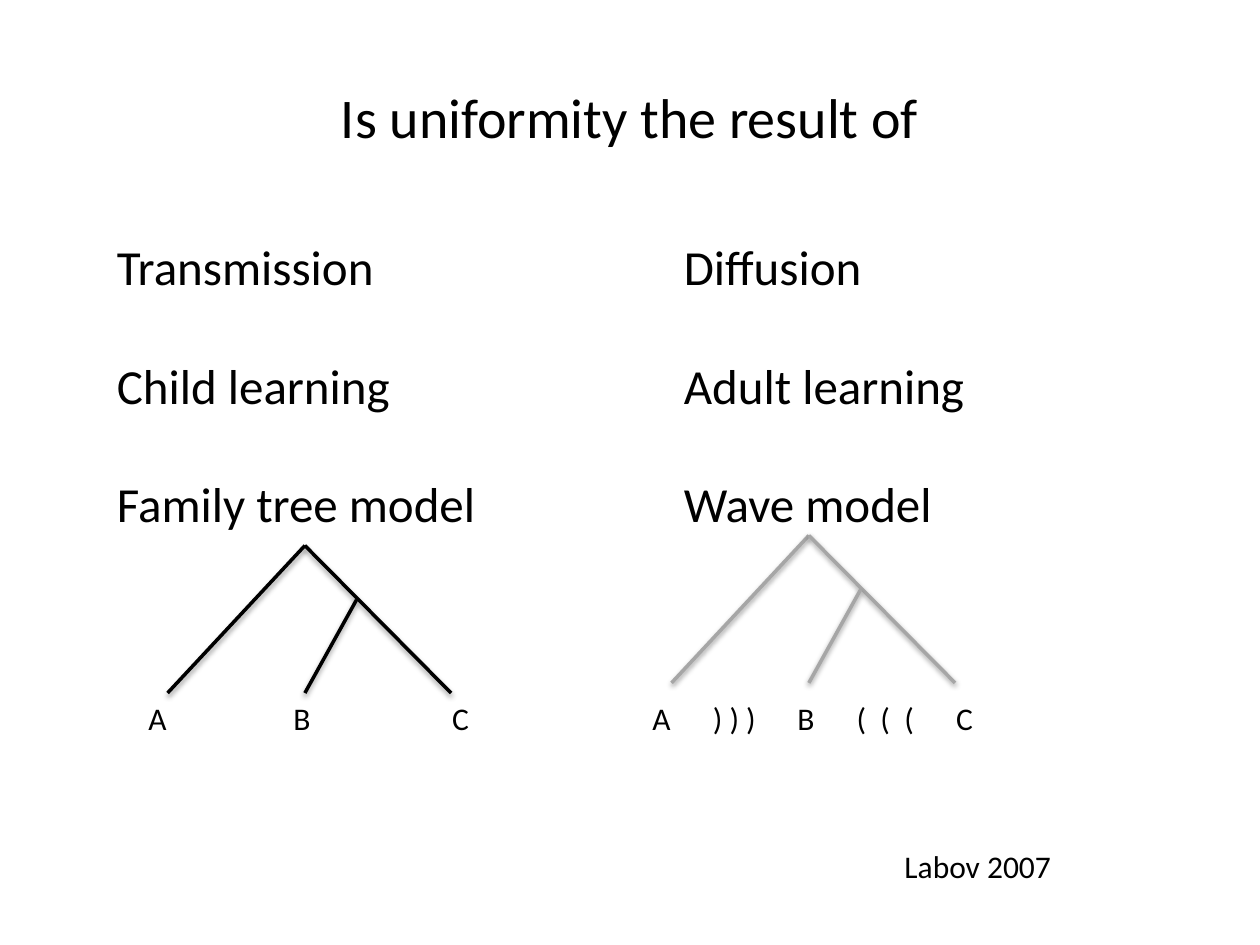
from typing import NamedTuple

import pptx
import pptx.dml.color
import pptx.enum.text
import pptx.oxml
import pptx.oxml.ns
import pptx.util
from pptx.util import Inches

FONT = "Calibri"
BLACK = "000000"
GREY = "A6A6A6"
SHADOW = (
    f'<a:effectLst {pptx.oxml.ns.nsdecls("a")}>'
    '<a:outerShdw blurRad="40000" dist="20000" dir="5400000" rotWithShape="0">'
    '<a:srgbClr val="000000"><a:alpha val="38000"/></a:srgbClr>'
    '</a:outerShdw></a:effectLst>'
)


class Label(NamedTuple):
    lines: list[str]
    left: float
    top: float
    width: float
    height: float
    size: int = 18
    stops: tuple[float, ...] = ()
    gap: int = 0
    title: bool = False


class Tree(NamedTuple):
    left: float
    top: float
    color: str


LABELS = [
    Label(["Is uniformity the result of"], 0.5, 0.3, 9, 1.25, 32, title=True),
    Label(["Transmission\tDiffusion",
           "Child learning\tAdult learning",
           "Family tree model\tWave model"],
          0.83, 1.83, 7.83, 3.4, 28, (4.5,), 34),
    Label(["A\tB\tC"], 1.08, 5.5, 3, 0.4, stops=(1.15, 2.41)),
    Label(["A\t) ) )\tB\t(\t(\t(\tC"], 5.08, 5.5, 3, 0.4,
          stops=(0.48, 1.15, 1.62, 1.81, 2, 2.41)),
    Label(["Labov 2007"], 7.08, 6.67, 2.42, 0.42),
]
TREES = [Tree(1.33, 4.33, BLACK), Tree(5.33, 4.25, GREY)]
# Branch ends, measured from the top left corner of a tree
BRANCHES = [
    ((1.09, 0), (0, 1.17)),
    ((1.09, 0), (2.25, 1.17)),
    ((1.5, 0.43), (1.09, 1.17)),
]


def rgb(code: str) -> pptx.dml.color.RGBColor:
    return pptx.dml.color.RGBColor.from_string(code)


def set_tabs(para, stops: tuple[float, ...]) -> None:
    """Give a paragraph left tab stops, in inches from the text edge."""
    tabs = "".join(f'<a:tab pos="{Inches(stop)}" algn="l"/>' for stop in stops)
    para._p.get_or_add_pPr().append(pptx.oxml.parse_xml(
        f'<a:tabLst {pptx.oxml.ns.nsdecls("a")}>{tabs}</a:tabLst>'))


def add_label(slide, label: Label) -> None:
    box = slide.shapes.add_textbox(Inches(label.left), Inches(label.top),
                                   Inches(label.width), Inches(label.height))
    frame = box.text_frame
    frame.word_wrap = True
    frame.text = "\n".join(label.lines)
    if label.title:
        frame.vertical_anchor = pptx.enum.text.MSO_ANCHOR.MIDDLE
    for row, para in enumerate(frame.paragraphs):
        if label.title:
            para.alignment = pptx.enum.text.PP_ALIGN.CENTER
        if row and label.gap:
            para.space_before = pptx.util.Pt(label.gap)
        if label.stops:
            set_tabs(para, label.stops)
        for run in para.runs:
            run.font.name = FONT
            run.font.size = pptx.util.Pt(label.size)
            run.font.color.rgb = rgb(BLACK)


def add_tree(slide, tree: Tree) -> None:
    for (x1, y1), (x2, y2) in BRANCHES:
        branch = slide.shapes.add_connector(
            pptx.enum.shapes.MSO_CONNECTOR.STRAIGHT,
            Inches(tree.left + x1), Inches(tree.top + y1),
            Inches(tree.left + x2), Inches(tree.top + y2))
        branch.line.color.rgb = rgb(tree.color)
        branch.line.width = pptx.util.Pt(2)
        branch._element.spPr.append(pptx.oxml.parse_xml(SHADOW))


def main() -> None:
    deck = pptx.Presentation()
    deck.slide_width = Inches(10)
    deck.slide_height = Inches(7.5)
    slide = deck.slides.add_slide(deck.slide_layouts[6])
    for label in LABELS:
        add_label(slide, label)
    for tree in TREES:
        add_tree(slide, tree)
    deck.save("out.pptx")


if __name__ == "__main__":
    main()
